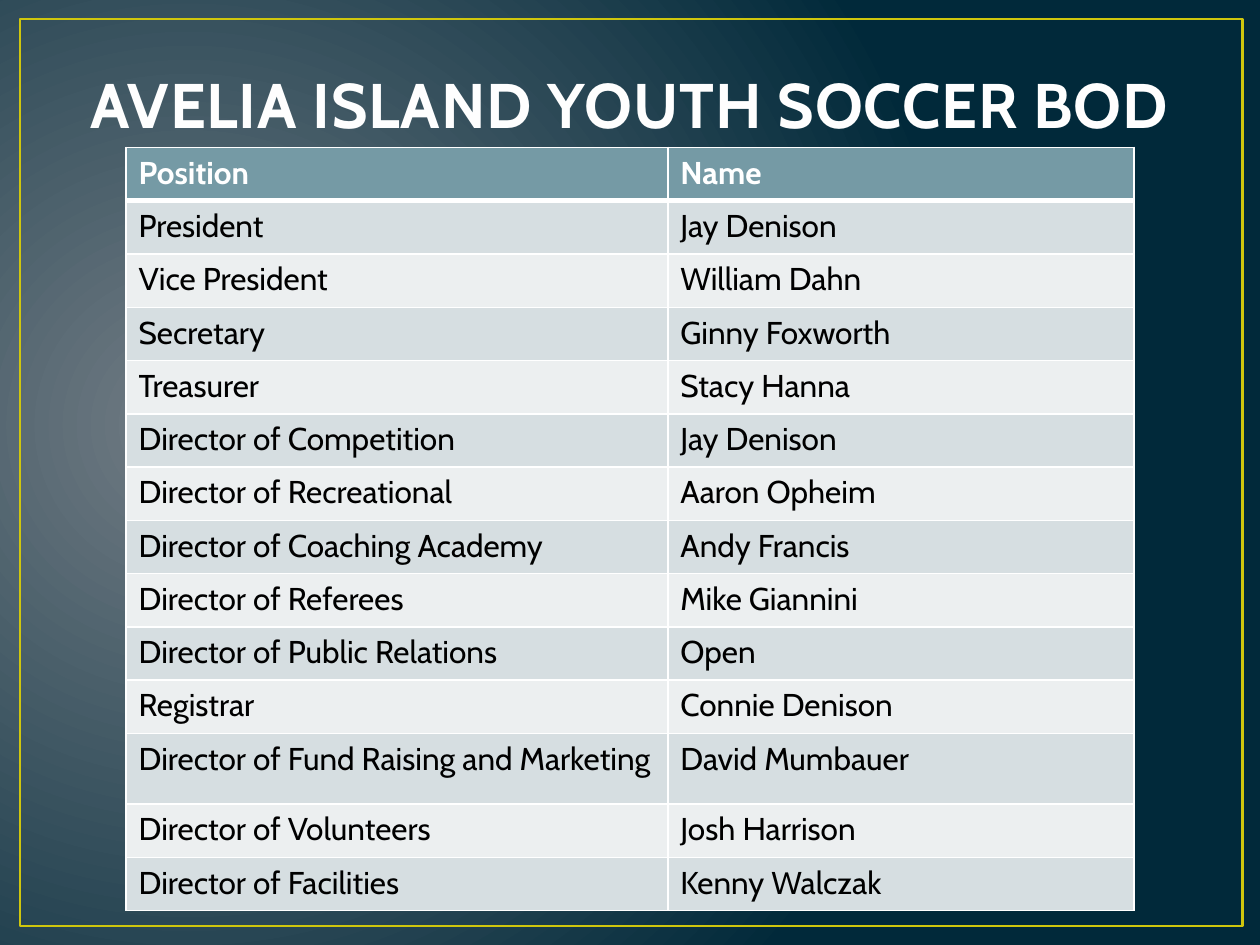
from lxml import etree
from pptx import Presentation
from pptx.dml.color import RGBColor
from pptx.enum.shapes import MSO_SHAPE
from pptx.enum.text import MSO_ANCHOR, PP_ALIGN
from pptx.oxml.ns import qn
from pptx.util import Inches, Pt

FONT = "Cabin"
GLOW = RGBColor(0x71, 0x7C, 0x84)
NAVY = RGBColor(0x01, 0x29, 0x3A)
GOLD = RGBColor(0xCF, 0xC6, 0x0D)
TITLE_WHITE = RGBColor(0xFE, 0xFE, 0xFE)
TITLE_EDGE = RGBColor(0x38, 0x4F, 0x55)
WHITE = RGBColor(0xFF, 0xFF, 0xFF)
BLACK = RGBColor(0x00, 0x00, 0x00)
HEADER_TEAL = RGBColor(0x75, 0x9A, 0xA5)
BANDS = [RGBColor(0xEC, 0xEF, 0xF0), RGBColor(0xD6, 0xDE, 0xE1)]

BOARD = [
    ("Position", "Name"),
    ("President", "Jay Denison"),
    ("Vice President", "William Dahn"),
    ("Secretary", "Ginny Foxworth"),
    ("Treasurer", "Stacy Hanna"),
    ("Director of Competition", "Jay Denison"),
    ("Director of Recreational", "Aaron Opheim"),
    ("Director of Coaching Academy", "Andy Francis"),
    ("Director of Referees", "Mike Giannini"),
    ("Director of Public Relations", "Open"),
    ("Registrar", "Connie Denison"),
    ("Director of Fund Raising and Marketing", "David Mumbauer"),
    ("Director of Volunteers", "Josh Harrison"),
    ("Director of Facilities", "Kenny Walczak"),
]
TALL_ROW = 11
TALL_HEIGHT = 0.56
TABLE_HEIGHT = 6.06
COLUMN_WIDTHS = (4.3, 3.7)


def write_text(frame, text, size=18, color=BLACK, bold=False, align=PP_ALIGN.LEFT):
    paragraph = frame.paragraphs[0]
    paragraph.alignment = align
    run = paragraph.add_run()
    run.text = text
    run.font.name = FONT
    run.font.size = Pt(size)
    run.font.bold = bold
    run.font.color.rgb = color
    return run


def line_xml(tag, color, points):
    line = etree.Element(qn(tag), w=str(int(Pt(points))))
    fill = etree.SubElement(line, qn("a:solidFill"))
    etree.SubElement(fill, qn("a:srgbClr"), val=str(color))
    return line


def paint_background(slide):
    """Radial glow at the left, fading to navy."""
    fill = slide.background.fill
    fill.gradient()
    for stop, color, position in zip(fill.gradient_stops, (GLOW, NAVY), (0, 1)):
        stop.color.rgb = color
        stop.position = position
    linear = next(slide.background._cSld.iter(qn("a:lin")))
    radial = etree.Element(qn("a:path"), {"path": "circle"})
    etree.SubElement(radial, qn("a:fillToRect"),
                     l="15000", t="50000", r="85000", b="60000")
    linear.getparent().replace(linear, radial)


def add_border_frame(slide):
    border = slide.shapes.add_shape(
        MSO_SHAPE.RECTANGLE, Inches(0.16), Inches(0.15), Inches(9.7), Inches(7.2))
    border.shadow.inherit = False
    border.fill.background()
    border.line.color.rgb = GOLD
    border.line.width = Pt(1.5)


def add_title(slide, text):
    title = slide.shapes.add_textbox(Inches(0.5), Inches(0.3), Inches(9), Inches(0.87))
    frame = title.text_frame
    frame.word_wrap = True
    frame.vertical_anchor = MSO_ANCHOR.BOTTOM
    run = write_text(frame, text, size=36, color=TITLE_WHITE, bold=True,
                     align=PP_ALIGN.CENTER)
    properties = run.font._element
    properties.set("spc", "50")
    properties.insert(0, line_xml("a:ln", TITLE_EDGE, 1.05))


def style_cell(cell, text, row):
    is_header = row == 0
    above = 3 if row == 1 else 1
    below = 3 if is_header else 1
    properties = cell._tc.get_or_add_tcPr()
    for side, points in zip("LRTB", (1, 1, above, below)):
        properties.append(line_xml(f"a:ln{side}", WHITE, points))
    cell.fill.solid()
    cell.fill.fore_color.rgb = HEADER_TEAL if is_header else BANDS[row % 2]
    write_text(cell.text_frame, text, color=WHITE if is_header else BLACK,
               bold=is_header)


def add_board_table(slide):
    table = slide.shapes.add_table(
        len(BOARD), len(COLUMN_WIDTHS), Inches(1), Inches(1.17),
        Inches(sum(COLUMN_WIDTHS)), Inches(TABLE_HEIGHT)).table
    for column, width in zip(table.columns, COLUMN_WIDTHS):
        column.width = Inches(width)
    row_height = (TABLE_HEIGHT - TALL_HEIGHT) / (len(BOARD) - 1)
    for row, entry in enumerate(BOARD):
        table.rows[row].height = Inches(TALL_HEIGHT if row == TALL_ROW else row_height)
        for column, text in enumerate(entry):
            style_cell(table.cell(row, column), text, row)


def main():
    deck = Presentation()
    deck.slide_width, deck.slide_height = Inches(10), Inches(7.5)
    slide = deck.slides.add_slide(deck.slide_layouts[6])
    paint_background(slide)
    add_border_frame(slide)
    add_title(slide, "AVELIA ISLAND YOUTH SOCCER BOD")
    add_board_table(slide)
    deck.save("out.pptx")


if __name__ == "__main__":
    main()
